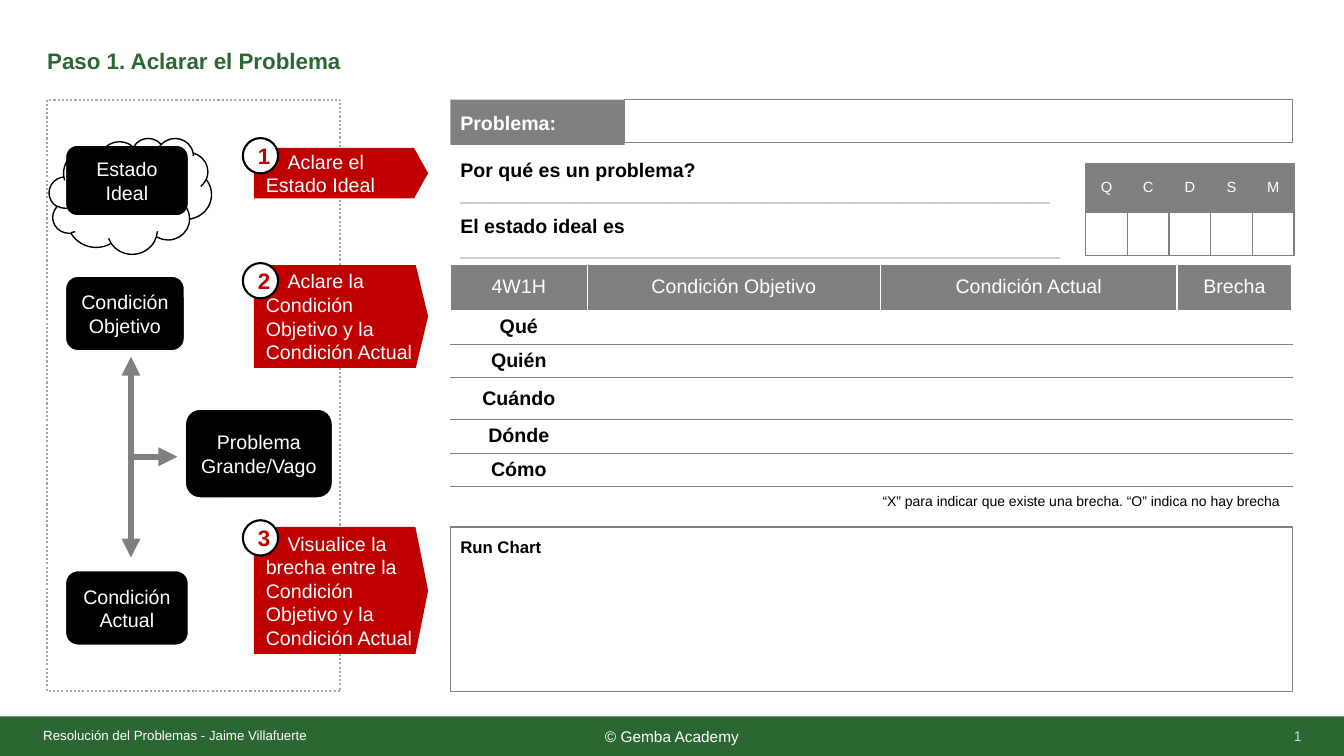
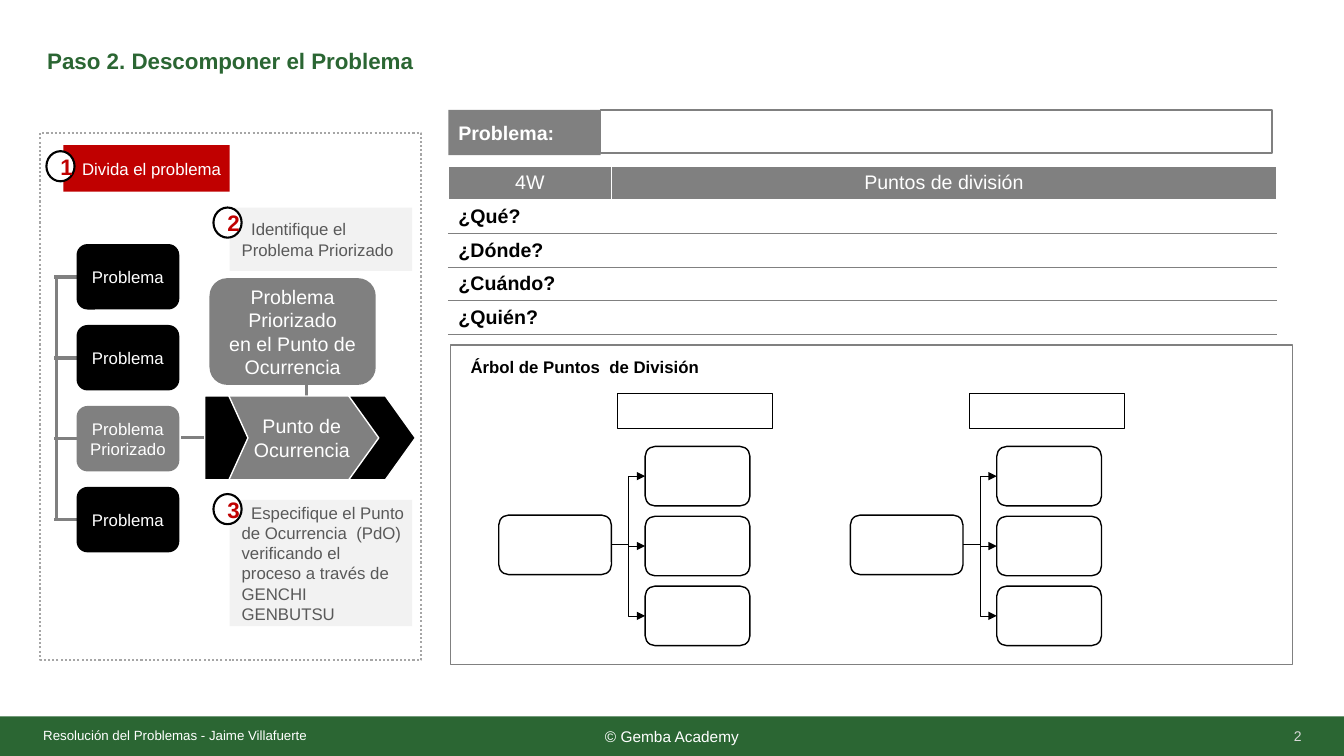
from lxml.etree import SubElement
from pptx import Presentation
from pptx.dml.color import RGBColor
from pptx.enum.dml import MSO_LINE
from pptx.enum.shapes import MSO_CONNECTOR, MSO_SHAPE
from pptx.enum.text import MSO_ANCHOR, PP_ALIGN
from pptx.oxml.ns import qn
from pptx.util import Cm, Pt

GREEN, RED, GRAY = "2B6633", "C00000", "808080"
BLACK, WHITE, PALE = "000000", "FFFFFF", "F2F2F2"
LEFT, CENTER, RIGHT = PP_ALIGN.LEFT, PP_ALIGN.CENTER, PP_ALIGN.RIGHT
RECT, ROUND = MSO_SHAPE.RECTANGLE, MSO_SHAPE.ROUNDED_RECTANGLE
PLATE = MSO_SHAPE.PENTAGON
ink = RGBColor.from_string


def box(page, form, at, text="", size=14, tint=WHITE, bold=False, align=CENTER,
        fill=None, edge=None, width=1, pad=(0.25, 0.13, 0.25, 0.13), adj=None):
    spot = [Cm(v) for v in at]
    if form is None:
        shape = page.shapes.add_textbox(*spot)
    else:
        shape = page.shapes.add_shape(form, *spot)
        shape.shadow.inherit = False
    if adj is not None:
        shape.adjustments[0] = adj
    if fill:
        shape.fill.solid()
        shape.fill.fore_color.rgb = ink(fill)
    else:
        shape.fill.background()
    if edge:
        shape.line.color.rgb = ink(edge)
        shape.line.width = Pt(width)
    else:
        shape.line.fill.background()
    if text:
        frame = shape.text_frame
        frame.text = text
        frame.word_wrap = True
        frame.vertical_anchor = MSO_ANCHOR.MIDDLE
        frame.margin_left, frame.margin_top, frame.margin_right, frame.margin_bottom = map(Cm, pad)
        for para in frame.paragraphs:
            para.alignment = align
            for run in para.runs:
                run.font.name, run.font.size, run.font.bold = "Arial", Pt(size), bold
                run.font.color.rgb = ink(tint)
    return shape


def link(page, ends, tint=GRAY, width=2.25, heads=(), form=MSO_CONNECTOR.STRAIGHT):
    line = page.shapes.add_connector(form, *[Cm(v) for v in ends])
    line.line.color.rgb = ink(tint)
    line.line.width = Pt(width)
    props = line._element.spPr
    for head in heads:
        SubElement(props.find(qn("a:ln")), qn(head), type="triangle")
    SubElement(props, qn("a:effectLst"))
    return line


deck = Presentation()
deck.slide_width, deck.slide_height = Cm(33.87), Cm(19.05)

plans = [
    ("Paso 1. Aclarar el Problema", (11.35, 2.51), 4.39, 16.84,
     (1.19, 2.51, 7.39, 14.91), (11.35, 13.28, 21.23, 4.14),
     "Run Chart", (11.35, 13.39, 3.12, 0.76)),
    ("Paso 2. Descomponer el Problema", (11.3, 2.77), 3.84, 16.92,
     (1.02, 3.35, 9.6, 13.28), (11.35, 8.69, 21.23, 8.05),
     "Árbol de Puntos  de División", (11.61, 8.86, 7.09, 0.76)),
]
pages = []
for num, (title, (left, top), wide, room, zone, panel, name, spot) in enumerate(plans, 1):
    page = deck.slides.add_slide(deck.slide_layouts[6])
    pages.append(page)
    box(page, RECT, (0, 18.05, 33.87, 1), "© Gemba Academy", 11, fill=GREEN)
    box(page, None, (0.94, 0.86, 29.21, 1.32), title, 16, GREEN, True, LEFT)
    box(page, None, (1.09, 18.21, 7.62, 0.61), "Resolución del Problemas - Jaime Villafuerte",
        9.5, align=LEFT, pad=(0, 0, 0, 0))
    box(page, None, (25.43, 18.05, 7.62, 1), str(num), 10, "D9D9D9", align=RIGHT)
    box(page, RECT, (left, top, wide, 1.14), "Problema:", bold=True, align=LEFT, fill=GRAY)
    box(page, RECT, (left + wide, top, room, 1.09), edge=GRAY)
    area = box(page, RECT, zone, edge="A6A6A6", width=1.5)
    area.line.dash_style = MSO_LINE.ROUND_DOT
    box(page, RECT, panel, edge=GRAY)
    box(page, None, spot, name, 12, BLACK, True, LEFT)
one, two = pages

ask = box(one, None, (11.35, 3.86, 15.98, 2.39),
          "Por qué es un problema? \nEl estado ideal es ", 14, BLACK, True, LEFT)
ask.text_frame.vertical_anchor = MSO_ANCHOR.TOP
for para, count in zip(ask.text_frame.paragraphs, (54, 55)):
    rule = para.add_run()
    rule.text = "_" * count
    rule.font.name, rule.font.size, rule.font.bold = "Arial", Pt(14), True
    rule.font.color.rgb = ink(GRAY)
ask.text_frame.paragraphs[1].space_before = Pt(6)
box(one, None, (17.45, 12.29, 15.04, 0.69),
    "“X” para indicar que existe una brecha. “O” indica no hay brecha", 10, BLACK, align=RIGHT)

for text, at in [
    ("Condición Objetivo", (1.65, 6.96, 3, 1.88)),
    ("Condición Actual", (1.65, 14.38, 3.1, 1.88)),
    ("Problema Grande/Vago", (4.67, 10.31, 3.71, 2.24)),
    ("Estado Ideal", (1.65, 3.66, 3.1, 1.78)),
]:
    box(one, ROUND, at, text, fill=BLACK, edge=WHITE)
box(one, MSO_SHAPE.CLOUD, (1.24, 3.48, 4.09, 2.92), edge=BLACK)
link(one, (3.3, 8.99, 3.3, 14.05), width=4.5, heads=("a:headEnd", "a:tailEnd"))
link(one, (3.3, 11.51, 4.47, 11.51), width=4.5, heads=("a:tailEnd",))

link(two, (1.42, 6.98, 1.42, 13.1))
for row, text in enumerate(("Problema", "Problema", "Problema\nPriorizado", "Problema")):
    top = 6.15 + 2.04 * row
    link(two, (1.93, top + 0.83, 1.37, top + 0.83))
    box(two, ROUND, (1.93, top, 2.59, 1.65), text, 12, fill=GRAY if row == 2 else BLACK)
link(two, (5.16, 11.02, 4.55, 11.02))
link(two, (7.72, 10.01, 7.72, 8.92))
box(two, ROUND, (5.28, 7.01, 4.19, 2.69),
    "Problema Priorizado\nen el Punto de Ocurrencia", fill=GRAY)
box(two, PLATE, (5.56, 9.98, 4.57, 2.11), "Punto de\nOcurrencia",
    fill=GRAY, edge=WHITE, adj=0.45)
box(two, PLATE, (5.16, 9.98, 1.09, 2.11), fill=BLACK, edge=WHITE, adj=0.44)
box(two, MSO_SHAPE.CHEVRON, (8.79, 9.98, 1.68, 2.11), fill=BLACK, edge=WHITE, adj=0.45)

for left in (12.57, 21.43):
    box(two, RECT, (left + 3, 9.91, 3.91, 0.89), edge=BLACK, width=0.75)
    root = box(two, ROUND, (left, 12.98, 2.84, 1.5), edge=BLACK)
    for row in range(3):
        top = 11.25 + 1.76 * row
        leaf = box(two, ROUND, (left + 3.69, top, 2.64, 1.5), edge=BLACK)
        branch = link(two, (left + 2.84, 13.73, left + 3.69, top + 0.75), BLACK, 0.5,
                      ("a:tailEnd",), MSO_CONNECTOR.ELBOW)
        branch.begin_connect(root, 3)
        branch.end_connect(leaf, 1)

steps = [
    (one, "1", "Aclare el Estado Ideal", (6.4, 3.73, 4.39, 1.27), (6.12, 3.48),
     RED, 0.3, 0, 0.55, 0.28),
    (one, "2", "Aclare la Condición Objetivo y la Condición Actual",
     (6.4, 6.68, 4.39, 2.59), (6.12, 6.63), RED, 0.3, 0, 0.55, 0.12),
    (one, "3", "Visualice la brecha entre la Condición Objetivo y la Condición Actual",
     (6.4, 13.28, 4.39, 3.2), (6.12, 13.11), RED, 0.3, 0, 0.55, 0.1),
    (two, "1", "Divida el problema", (1.6, 3.66, 4.19, 1.17), (1.17, 3.81),
     RED, 0, 0, 0.47, None),
    (two, "2", "Identifique el Problema Priorizado", (5.79, 5.23, 4.6, 1.6), (5.38, 5.23),
     PALE, 0.3, 0, 0.24, None),
    (two, "3", "Especifique el Punto de Ocurrencia  (PdO) verificando el proceso "
     "a través de GENCHI GENBUTSU", (5.79, 12.6, 4.6, 3.18), (5.38, 12.45),
     PALE, 0.3, 0.2, 0.24, None),
]
for page, num, text, at, spot, fill, near, far, lead, adj in steps:
    form, size, disc = (PLATE, 14, (0.89, 0.89)) if page is one else (RECT, 12, (0.71, 0.76))
    step = box(page, form, at, text, size, WHITE if fill == RED else "595959", align=LEFT,
               fill=fill, pad=(near, 0, far, 0), adj=adj)
    step.text_frame.paragraphs[0]._p.get_or_add_pPr().set("indent", str(Cm(lead)))
    box(page, MSO_SHAPE.OVAL, spot + disc, num, 16, RED, True, fill=WHITE, edge=BLACK, width=1.5)

grids = [
    (one, (11.35, 6.65), (3.45, 7.39, 7.47, 2.9), (1.17, 0.82, 0.82, 1.05, 0.82, 0.82),
     ("4W1H", "Condición Objetivo", "Condición Actual", "Brecha"),
     ("Qué", "Quién", "Cuándo", "Dónde", "Cómo"), 14, CENTER, "TB", 0.75),
    (one, (27.36, 4.11), (1.05,) * 5, (1.24, 1.09), tuple("QCDSM"), ("",),
     10.5, CENTER, "LRTB", 1),
    (two, (11.3, 4.19), (4.11, 16.76), (0.8,) + (0.82,) * 4, ("4W", "Puntos de división"),
     ("¿Qué?", "¿Dónde?", "¿Cuándo?", "¿Quién?"), 14, LEFT, "TB", 0.75),
]
for page, spot, cols, rows, heads, names, size, align, sides, width in grids:
    area = [Cm(v) for v in (*spot, sum(cols), sum(rows))]
    grid = page.shapes.add_table(len(rows), len(cols), *area).table
    for col, wide in zip(grid.columns, cols):
        col.width = Cm(wide)
    for row, tall in zip(grid.rows, rows):
        row.height = Cm(tall)
    data = [heads] + [(name,) + ("",) * (len(cols) - 1) for name in names]
    for r, line in enumerate(data):
        for c, text in enumerate(line):
            cell = grid.cell(r, c)
            cell.vertical_anchor = MSO_ANCHOR.MIDDLE
            para = cell.text_frame.paragraphs[0]
            para.text = text
            para.alignment = align if r else CENTER
            for run in para.runs:
                run.font.name, run.font.size, run.font.bold = "Arial", Pt(size), r > 0
                run.font.color.rgb = ink(BLACK if r else WHITE)
            if not text:
                SubElement(para._p, qn("a:endParaRPr"), sz=str(int(size * 100)))
            if r:
                cell.fill.background()
            else:
                cell.fill.solid()
                cell.fill.fore_color.rgb = ink(GRAY)
            if r or len(sides) == 4:
                props = cell._tc.get_or_add_tcPr()
                for place, side in enumerate(sides):
                    edge = SubElement(props, qn("a:ln" + side), w=str(Pt(width)))
                    SubElement(SubElement(edge, qn("a:solidFill")), qn("a:srgbClr"), val=GRAY)
                    props.insert(place, edge)

deck.save("out.pptx")
